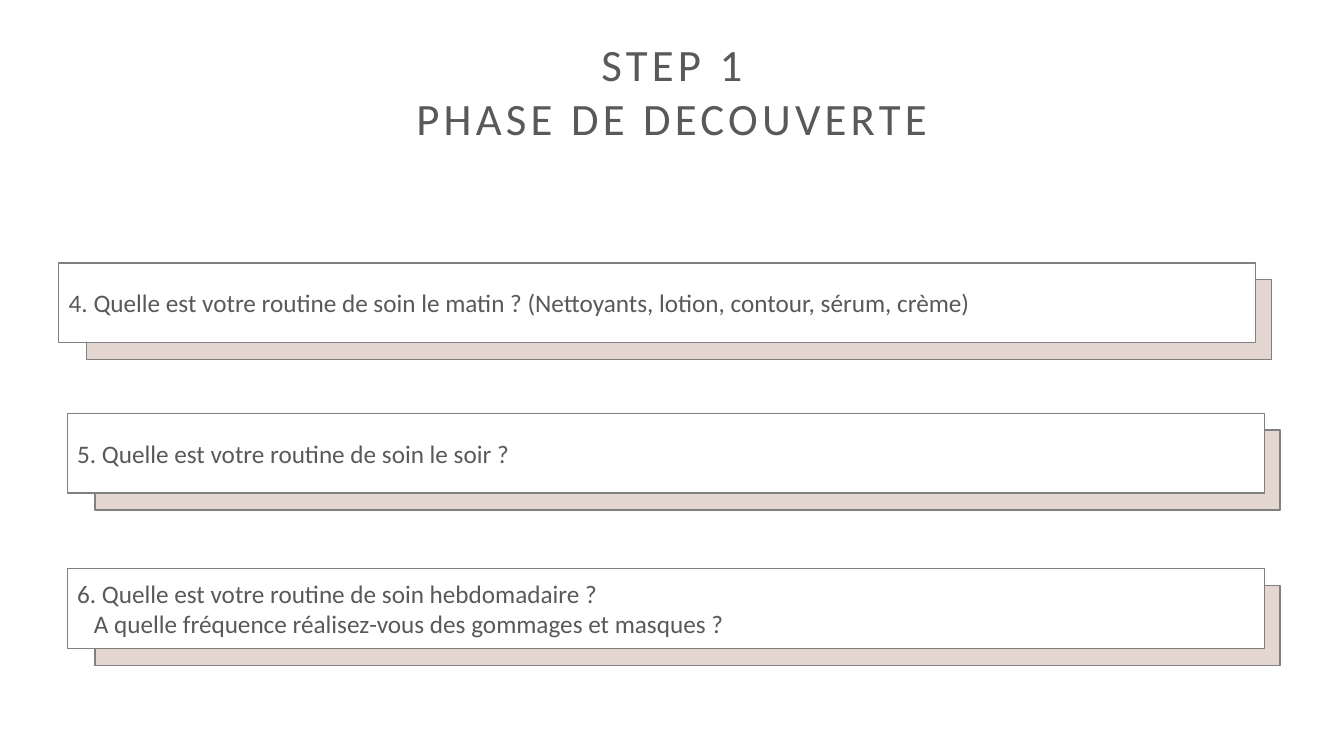
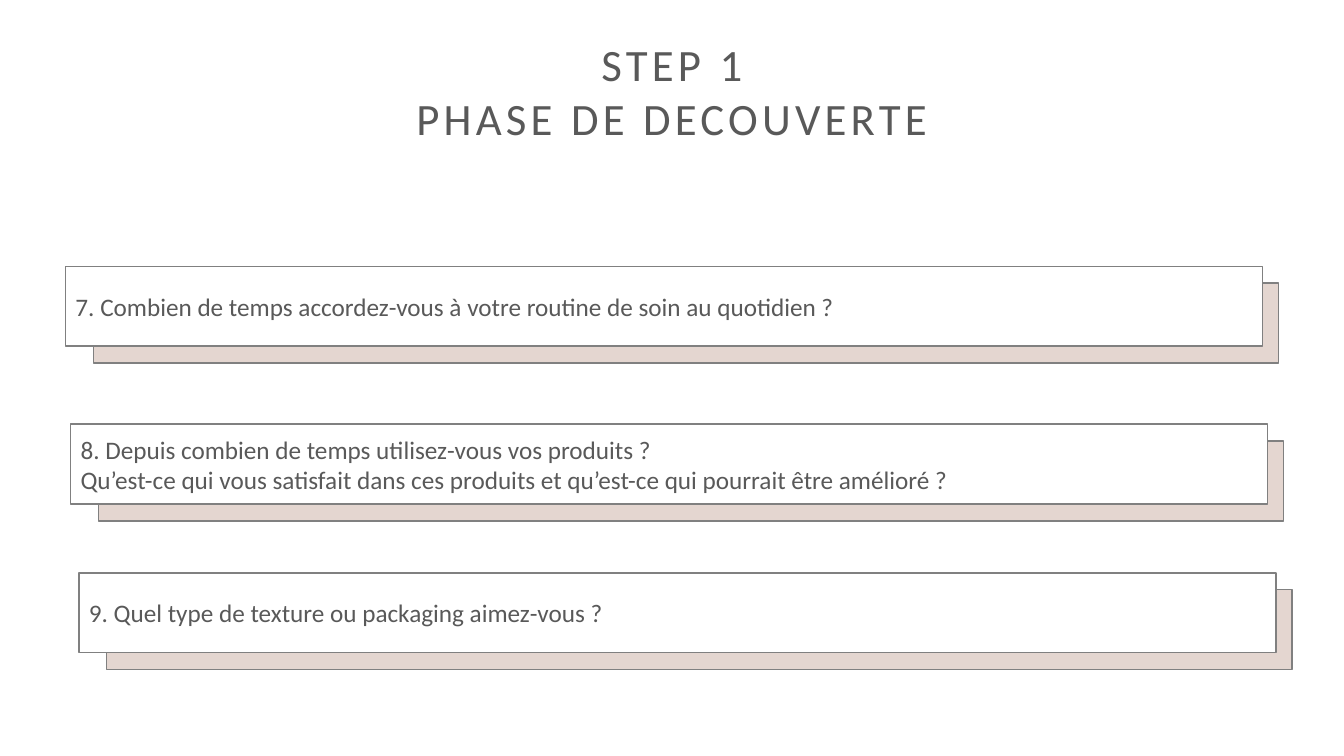
from dataclasses import dataclass
from typing import NamedTuple

from pptx import Presentation
from pptx.dml.color import RGBColor
from pptx.enum.shapes import MSO_SHAPE
from pptx.enum.text import MSO_ANCHOR, PP_ALIGN
from pptx.oxml.ns import qn
from pptx.util import Inches, Pt

COLS, ROWS = 160, 90
WIDTH, HEIGHT = Inches(13.33), Inches(7.5)


@dataclass(frozen=True)
class Theme:
    font: str = "Calibri"
    ink: RGBColor = RGBColor(0x59, 0x59, 0x59)
    edge: RGBColor = RGBColor(0x80, 0x80, 0x80)
    paper: RGBColor = RGBColor(0xFF, 0xFF, 0xFF)
    blush: RGBColor = RGBColor(0xE4, 0xD6, 0xD0)
    head: int = 32
    body: int = 18
    track: int = 3
    rule: int = 1


class Box(NamedTuple):
    """An area in grid columns and rows."""
    col: float
    row: float
    wide: float
    high: float

    def place(self) -> tuple[int, int, int, int]:
        x, y = WIDTH / COLS, HEIGHT / ROWS
        return (round(self.col * x), round(self.row * y),
                round(self.wide * x), round(self.high * y))


class Line(NamedTuple):
    text: str
    indent: int = 0


class Card(NamedTuple):
    col: float
    row: float
    lines: list[Line]


THEME = Theme()
TITLE = ["STEP 1", "PHASE DE DECOUVERTE"]
HEAD = Box(0, 3.8, COLS, 20.6)
FRONT = (142.5, 9.5)
BACK = (141.1, 9.5)
SHIFT = (3.3, 2)

DECK = [
    [
        Card(7, 31.3, [Line("4. Quelle est votre routine de soin le matin ? "
                            "(Nettoyants, lotion, contour, sérum, crème)")]),
        Card(8, 49.2, [Line("5. Quelle est votre routine de soin le soir ?")]),
        Card(8, 67.7, [
            Line("6. Quelle est votre routine de soin hebdomadaire ?"),
            Line("A quelle fréquence réalisez-vous des gommages et masques ?", 12),
        ]),
    ],
    [
        Card(7.8, 31.7, [Line("7. Combien de temps accordez-vous à votre routine "
                              "de soin au quotidien ?")]),
        Card(8.4, 50.5, [
            Line("8. Depuis combien de temps utilisez-vous vos produits ?"),
            Line("Qu’est-ce qui vous satisfait dans ces produits et qu’est-ce "
                 "qui pourrait être amélioré ?"),
        ]),
        Card(9.4, 68.2, [Line("9. Quel type de texture ou packaging aimez-vous ?")]),
    ],
]


def write(frame, lines: list[Line], size: int, align: PP_ALIGN, track: int = 0) -> None:
    frame.word_wrap = True
    for i, line in enumerate(lines):
        para = frame.paragraphs[0] if i == 0 else frame.add_paragraph()
        para.text = line.text
        para.alignment = align
        font = para.font
        font.name, font.size = THEME.font, Pt(size)
        font.color.rgb = THEME.ink
        props = para._p.pPr
        if line.indent:
            props.set("marL", str(Pt(line.indent)))
        if track:
            props.find(qn("a:defRPr")).set("spc", str(track * 100))


def panel(shapes, box: Box, fill: RGBColor):
    shape = shapes.add_shape(MSO_SHAPE.FLOWCHART_PROCESS, *box.place())
    shape.shadow.inherit = False
    shape.fill.solid()
    shape.fill.fore_color.rgb = fill
    shape.line.color.rgb = THEME.edge
    shape.line.width = Pt(THEME.rule)
    return shape


def draw_card(slide, card: Card) -> None:
    """Draw a question panel over its offset backing."""
    group = slide.shapes.add_group_shape().shapes
    panel(group, Box(card.col + SHIFT[0], card.row + SHIFT[1], *BACK), THEME.blush)
    front = panel(group, Box(card.col, card.row, *FRONT), THEME.paper)
    front.text_frame.vertical_anchor = MSO_ANCHOR.MIDDLE
    write(front.text_frame, card.lines, THEME.body, PP_ALIGN.LEFT)


def draw_title(slide) -> None:
    frame = slide.shapes.add_textbox(*HEAD.place()).text_frame
    write(frame, [Line(text) for text in TITLE], THEME.head, PP_ALIGN.CENTER, THEME.track)


def main() -> None:
    deck = Presentation()
    deck.slide_width, deck.slide_height = WIDTH, HEIGHT
    for cards in DECK:
        slide = deck.slides.add_slide(deck.slide_layouts[6])
        draw_title(slide)
        for card in cards:
            draw_card(slide, card)
    deck.save("out.pptx")


if __name__ == "__main__":
    main()
